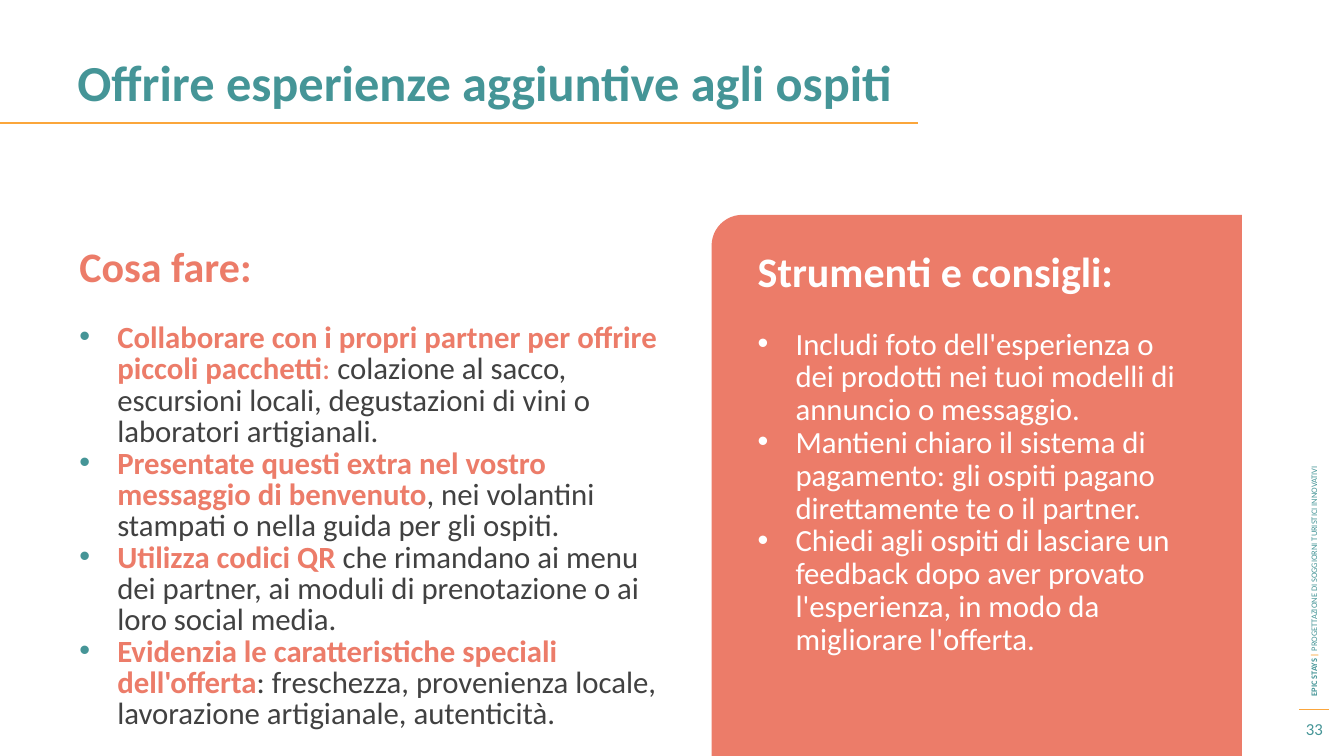
from dataclasses import dataclass

import pptx
import pptx.dml.color
import pptx.enum.shapes
import pptx.enum.text
import pptx.oxml
import pptx.oxml.ns
import pptx.shapes.autoshape
import pptx.slide
import pptx.text.text
import pptx.util

Pt = pptx.util.Pt
Align = pptx.enum.text.PP_ALIGN
Anchor = pptx.enum.text.MSO_ANCHOR

TEAL, ORANGE, CORAL = "459597", "FBA63B", "EC7C69"
DARK, WHITE = "414141", "FFFFFF"
BULLET_INDENT = 27


@dataclass(frozen=True)
class Piece:
    text: str
    color: str
    bold: bool = False


@dataclass(frozen=True)
class Line:
    pieces: tuple[Piece, ...]
    size: float
    spacing: float | None = None
    before: float = 0
    bullet: str | None = None
    align: Align = Align.LEFT


@dataclass(frozen=True)
class Block:
    left: float
    top: float
    width: float
    height: float
    lines: tuple[Line, ...]
    anchor: Anchor = Anchor.TOP
    rotation: float = 0


@dataclass(frozen=True)
class Rule:
    left: float
    right: float
    y: float
    weight: float
    color: str


def rgb(value: str) -> pptx.dml.color.RGBColor:
    return pptx.dml.color.RGBColor.from_string(value)


def add_bullet(paragraph: pptx.text.text._Paragraph, color: str) -> None:
    properties = paragraph._p.get_or_add_pPr()
    properties.set("marL", str(Pt(BULLET_INDENT)))
    properties.set("indent", str(-Pt(BULLET_INDENT)))
    namespace = pptx.oxml.ns.nsdecls("a")
    for xml in (
        f'<a:buClr {namespace}><a:srgbClr val="{color}"/></a:buClr>',
        f'<a:buFont {namespace} typeface="Arial"/>',
        f'<a:buChar {namespace} char="•"/>',
    ):
        properties.append(pptx.oxml.parse_xml(xml))


def write_line(paragraph: pptx.text.text._Paragraph, line: Line) -> None:
    if line.bullet:
        add_bullet(paragraph, line.bullet)
    paragraph.alignment = line.align
    if line.spacing:
        paragraph.line_spacing = Pt(line.spacing)
    if line.before:
        paragraph.space_before = Pt(line.before)
    for piece in line.pieces:
        run = paragraph.add_run()
        run.text = piece.text
        run.font.name = "Calibri"
        run.font.size = Pt(line.size)
        run.font.bold = piece.bold
        run.font.color.rgb = rgb(piece.color)


def add_block(slide: pptx.slide.Slide, block: Block) -> None:
    box = slide.shapes.add_textbox(
        Pt(block.left), Pt(block.top), Pt(block.width), Pt(block.height))
    box.rotation = block.rotation
    frame = box.text_frame
    frame.word_wrap = True
    frame.vertical_anchor = block.anchor
    for index, line in enumerate(block.lines):
        write_line(frame.add_paragraph() if index else frame.paragraphs[0], line)


def add_rule(slide: pptx.slide.Slide, rule: Rule) -> None:
    connector = slide.shapes.add_connector(
        pptx.enum.shapes.MSO_CONNECTOR.STRAIGHT,
        Pt(rule.left), Pt(rule.y), Pt(rule.right), Pt(rule.y))
    connector.line.color.rgb = rgb(rule.color)
    connector.line.width = Pt(rule.weight)
    connector._element.spPr.append(
        pptx.oxml.parse_xml(f'<a:effectLst {pptx.oxml.ns.nsdecls("a")}/>'))


def add_panel(slide: pptx.slide.Slide, left: float, top: float,
              width: float, height: float, radius: float) -> None:
    """Draw the coral panel; a quarter turn puts its round corner at top left."""
    shift = (width - height) / 2
    panel = slide.shapes.add_shape(
        pptx.enum.shapes.MSO_SHAPE.ROUND_1_RECTANGLE,
        Pt(left + shift), Pt(top - shift), Pt(height), Pt(width))
    panel.rotation = 270
    panel.adjustments[0] = radius / min(width, height)
    panel.shadow.inherit = False
    panel.fill.solid()
    panel.fill.fore_color.rgb = rgb(CORAL)
    panel.line.fill.background()


ACTIONS = (
    (Piece("Collaborare con i propri partner per offrire piccoli pacchetti", CORAL, True),
     Piece(": ", CORAL),
     Piece("colazione al sacco, escursioni locali, degustazioni di vini o "
           "laboratori artigianali.", DARK)),
    (Piece("Presentate questi extra nel vostro messaggio di benvenuto", CORAL, True),
     Piece(", nei volantini stampati o nella guida per gli ospiti.", DARK)),
    (Piece("Utilizza codici QR ", CORAL, True),
     Piece("che rimandano ai menu dei partner, ai moduli di prenotazione o ai "
           "loro social media.", DARK)),
    (Piece("Evidenzia le caratteristiche speciali dell'offerta", CORAL, True),
     Piece(": freschezza, provenienza locale, lavorazione artigianale, autenticità.", DARK)),
)
TIPS = (
    "Includi foto dell'esperienza o dei prodotti nei tuoi modelli di annuncio o messaggio.",
    "Mantieni chiaro il sistema di pagamento: gli ospiti pagano direttamente te o il partner.",
    "Chiedi agli ospiti di lasciare un feedback dopo aver provato l'esperienza, in modo da "
    "migliorare l'offerta.",
)
TIP_SPACING = 23.4

RULES = (
    Rule(928.1, 949, 506.9, 0.75, "FBA63D"),
    Rule(0, 655.9, 87.8, 1.5, ORANGE),
)
BLOCKS = (
    Block(730.8, 289.4, 415.4, 14.4, (
        Line((Piece("EPIC STAYS ", TEAL, True), Piece("| ", ORANGE, True),
              Piece("PROGETTAZIONE DI SOGGIORNI TURISTICI INNOVATIVI", TEAL)), 6),
    ), Anchor.MIDDLE, 270),
    Block(48.2, 38.9, 864, 63.4, (
        Line((Piece("Offrire esperienze aggiuntive agli ospiti", TEAL, True),), 36, 37.2),)),
    Block(920.2, 508.3, 37.4, 24.5, (
        Line((Piece("33", TEAL),), 12, align=Align.CENTER),), Anchor.MIDDLE),
    Block(49.7, 175, 442, 63.4, (Line((Piece("Cosa fare:", CORAL, True),), 30, 29),)),
    Block(49.7, 227.5, 442, 288, tuple(
        Line(pieces, 22, 22.4, bullet=TEAL) for pieces in ACTIONS)),
    Block(534.2, 184.3, 326.9, 258.5, (
        Line((Piece("Strumenti e consigli:", WHITE, True),), 30, TIP_SPACING),
        *(Line((Piece(tip, WHITE),), 22, TIP_SPACING,
               before=0 if index else TIP_SPACING, bullet=WHITE)
          for index, tip in enumerate(TIPS)))),
)


def main() -> None:
    presentation = pptx.Presentation()
    presentation.slide_width, presentation.slide_height = Pt(960), Pt(540)
    slide = presentation.slides.add_slide(presentation.slide_layouts[6])
    add_panel(slide, left=508.3, top=153.4, width=378.7, height=386.6, radius=22)
    for rule in RULES:
        add_rule(slide, rule)
    for block in BLOCKS:
        add_block(slide, block)
    presentation.save("out.pptx")


if __name__ == "__main__":
    main()
